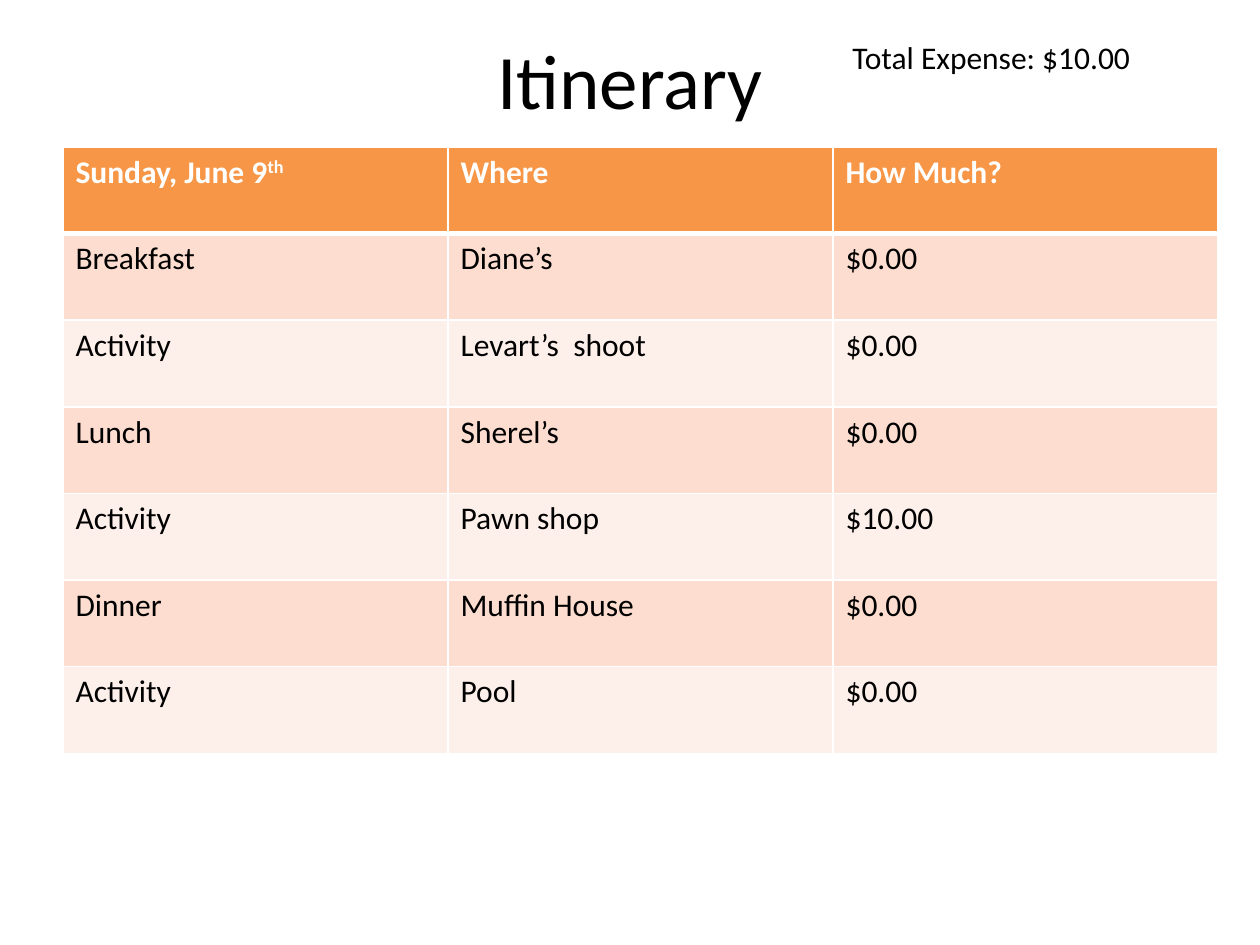
import pptx
import pptx.util
import pptx.dml.color
import pptx.enum.text
import lxml.etree as etree
from pptx.oxml.ns import qn

Pt = pptx.util.Pt

# Content
TITLE = "Itinerary"
TOTAL = "Total Expense: $10.00"
HEAD = [("Sunday, June 9", "th"), ("Where", ""), ("How Much?", "")]
ROWS = [
    ("Breakfast", "Diane’s", "$0.00"),
    ("Activity", "Levart’s  shoot", "$0.00"),
    ("Lunch", "Sherel’s", "$0.00"),
    ("Activity", "Pawn shop", "$10.00"),
    ("Dinner", "Muffin House", "$0.00"),
    ("Activity", "Pool", "$0.00"),
]
BANDS = ["FCDDCF", "FDEFE9"]
ORANGE, WHITE, BLACK = "F79646", "FFFFFF", "000000"
COL, ROW = 220, 49.5


def color(text):
    return pptx.dml.color.RGBColor.from_string(text)


def style(par, size, hue, bold=False):
    font = par.font
    font.name, font.size, font.bold = "Calibri", Pt(size), bold
    font.color.rgb = color(hue)


def place(shape, left, top, width, height):
    shape.left, shape.top = Pt(left), Pt(top)
    shape.width, shape.height = Pt(width), Pt(height)


def border(cell, side, width):
    line = etree.SubElement(cell._tc.get_or_add_tcPr(), qn("a:ln" + side),
                            w=str(Pt(width)))
    fill = etree.SubElement(line, qn("a:solidFill"))
    etree.SubElement(fill, qn("a:srgbClr"), val=WHITE)


def paint(cell, fill, hue, bold, top, base):
    # Borders come before the fill in the cell properties
    for side, width in (("L", 1), ("R", 1), ("T", top), ("B", base)):
        border(cell, side, width)
    cell.fill.solid()
    cell.fill.fore_color.rgb = color(fill)
    style(cell.text_frame.paragraphs[0], 18, hue, bold)


deck = pptx.Presentation()
deck.slide_width, deck.slide_height = Pt(720), Pt(540)
slide = deck.slides.add_slide(deck.slide_layouts[5])

# Title
title = slide.shapes.title
place(title, 36, 0, 648, 90)
title.text_frame.text = TITLE
title.text_frame.vertical_anchor = pptx.enum.text.MSO_ANCHOR.MIDDLE
par = title.text_frame.paragraphs[0]
par.alignment = pptx.enum.text.PP_ALIGN.CENTER
style(par, 44, BLACK)

# Total
box = slide.shapes.add_textbox(Pt(480), Pt(18), Pt(222), Pt(29))
box.text_frame.word_wrap = True
box.text_frame.auto_size = pptx.enum.text.MSO_AUTO_SIZE.SHAPE_TO_FIT_TEXT
box.text_frame.text = TOTAL
style(box.text_frame.paragraphs[0], 18, BLACK)

# Table
count = len(ROWS) + 1
table = slide.shapes.add_table(count, len(HEAD), Pt(36), Pt(84),
                               Pt(COL * len(HEAD)), Pt(ROW * count)).table
for col in table.columns:
    col.width = Pt(COL)
for row in table.rows:
    row.height = Pt(ROW)

# Header row, with the raised ordinal
for c, (text, mark) in enumerate(HEAD):
    cell = table.cell(0, c)
    cell.text = text
    if mark:
        run = cell.text_frame.paragraphs[0].add_run()
        run.text = mark
        run._r.get_or_add_rPr().set("baseline", "30000")
    paint(cell, ORANGE, WHITE, True, 1, 3)

# Banded body rows
for r, row in enumerate(ROWS, 1):
    for c, text in enumerate(row):
        cell = table.cell(r, c)
        cell.text = text
        paint(cell, BANDS[(r - 1) % 2], BLACK, False, 3 if r == 1 else 1, 1)

deck.save("out.pptx")
